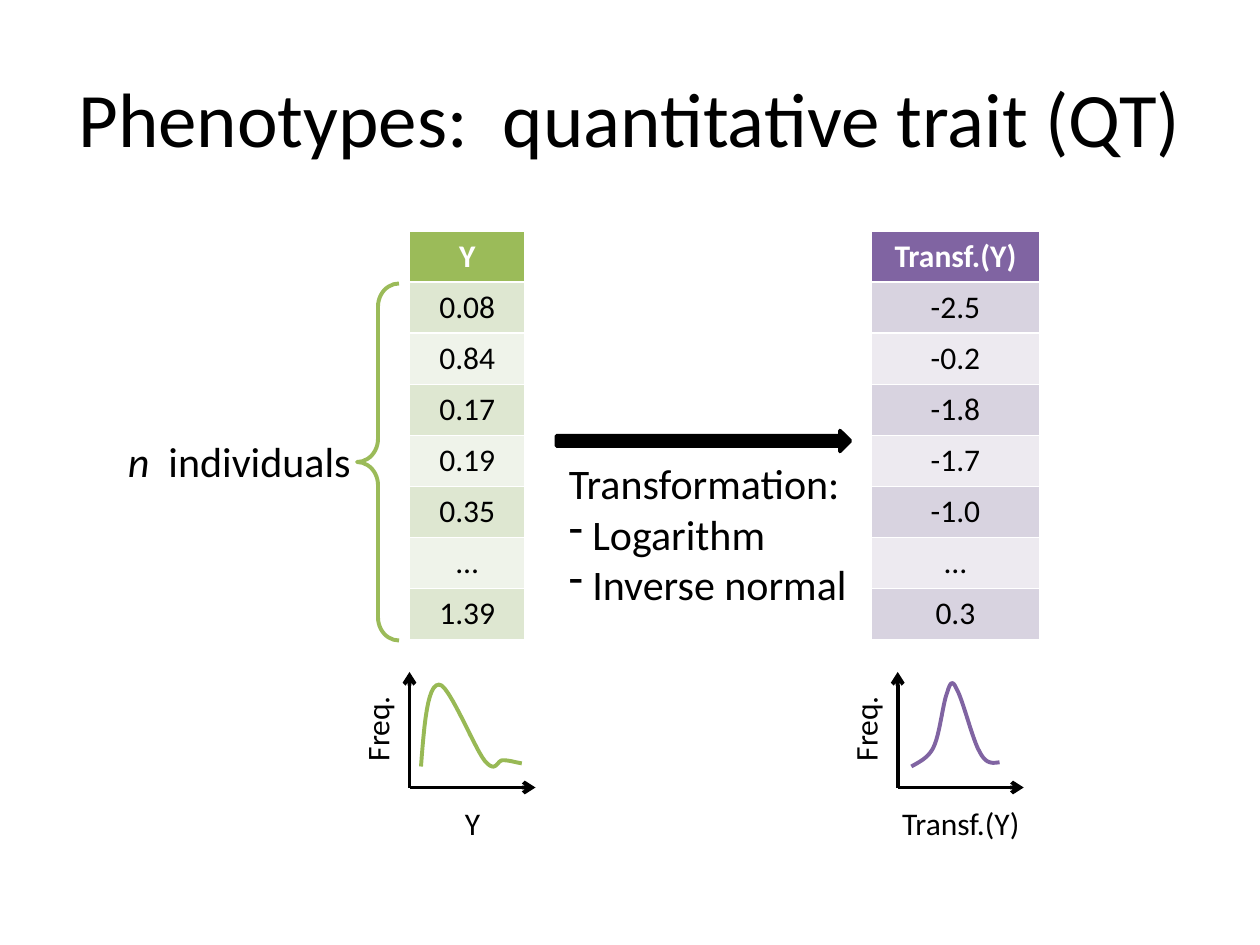
from itertools import cycle

from lxml.etree import SubElement
from pptx import Presentation
from pptx.dml.color import RGBColor
from pptx.enum.shapes import MSO_CONNECTOR, MSO_SHAPE
from pptx.enum.text import MSO_ANCHOR, MSO_AUTO_SIZE, PP_ALIGN
from pptx.oxml.ns import qn
from pptx.util import Inches, Pt

BLACK = RGBColor(0x00, 0x00, 0x00)
WHITE = RGBColor(0xFF, 0xFF, 0xFF)
GREEN = RGBColor(0x9B, 0xBB, 0x59)
GREENS = RGBColor(0xDE, 0xE7, 0xD1), RGBColor(0xEF, 0xF3, 0xEA)
LEAF = RGBColor(0x98, 0xB9, 0x55)
PURPLE = RGBColor(0x80, 0x64, 0xA2)
PURPLES = RGBColor(0xD8, 0xD3, 0xE0), RGBColor(0xED, 0xEA, 0xF0)

RAW = ["Y", "0.08", "0.84", "0.17", "0.19", "0.35", "…", "1.39"]
NEW = ["Transf.(Y)", "-2.5", "-0.2", "-1.8", "-1.7", "-1.0", "…", "0.3"]
ROW = 4.86
AXIS = 75
SKEWED = [(1.1, 2), (1.4, 5.9), (1.7, 9.8), (2.8, 9.8), (3.7, 10),
          (6.2, 3.7), (7.2, 2.5), (8.3, 1.3), (8.3, 2.6), (8.9, 2.6),
          (9.5, 2.6), (10.1, 2.4), (10.7, 2.3)]
NORMAL = [(1.3, 2), (2, 2.4), (2.9, 2.8), (3.4, 3.8), (4, 5), (4.3, 8),
          (4.7, 9), (5, 10), (5.2, 10.3), (5.6, 9.4), (6.2, 8.4),
          (7.1, 4.6), (7.8, 3.4), (8.4, 2.2), (9, 2.3), (9.7, 2.4)]


def grid(*cells):
    """Turn counts of twelfth-inch grid cells into lengths."""
    return [Inches(n / 12) for n in cells]


def style(par, size, color=BLACK, align=None, bold=False):
    """Format all runs of one paragraph."""
    par.alignment = align
    for run in par.runs:
        run.font.name = "Calibri"
        run.font.size = Pt(size)
        run.font.bold = bold
        run.font.color.rgb = color


def add_text(slide, box, text, size, align=None, wrap=False):
    """Add a text box and return it."""
    shape = slide.shapes.add_textbox(*grid(*box))
    frame = shape.text_frame
    frame.word_wrap = wrap
    frame.auto_size = MSO_AUTO_SIZE.NONE if wrap else MSO_AUTO_SIZE.SHAPE_TO_FIT_TEXT
    frame.text = text
    for par in frame.paragraphs:
        style(par, size, align=align)
    return shape


def add_column(slide, left, width, values, head, bands):
    """Add a one-column table with a header and banded rows."""
    box = grid(left, 22, width, ROW * len(values))
    table = slide.shapes.add_table(len(values), 1, *box).table
    band = cycle(bands)
    for i, value in enumerate(values):
        cell = table.cell(i, 0)
        cell.text = value
        cell.fill.solid()
        cell.fill.fore_color.rgb = next(band) if i else head
        par = cell.text_frame.paragraphs[0]
        style(par, 18, BLACK if i else WHITE, PP_ALIGN.CENTER, not i)


def add_arrow(slide, *ends):
    """Add a black axis line with an open arrowhead at its end."""
    line = slide.shapes.add_connector(MSO_CONNECTOR.STRAIGHT, *grid(*ends))
    line.line.color.rgb = BLACK
    line.line.width = Pt(2.25)
    SubElement(line.line._get_or_add_ln(), qn("a:tailEnd"), type="arrow")
    SubElement(line._element.spPr, qn("a:effectLst"))


def trace(knots, steps=12):
    """Sample points along a chain of cubic Bezier pieces."""
    points = [knots[0]]
    for i in range(0, len(knots) - 1, 3):
        for k in range(1, steps + 1):
            t = k / steps
            parts = (1 - t) ** 3, 3 * t * (1 - t) ** 2, 3 * t * t * (1 - t), t ** 3
            points.append(tuple(sum(p * knot[d] for p, knot in zip(parts, knots[i:i + 4]))
                                for d in (0, 1)))
    return points


def add_shape(slide, kind, box, line, width, fill=None):
    """Add an outlined preset shape and return it."""
    shape = slide.shapes.add_shape(kind, *grid(*box))
    paint(shape, line, width, fill)
    return shape


def paint(shape, line, width, fill=None):
    """Set the line and fill of a shape."""
    shape.shadow.inherit = False
    shape.line.color.rgb = line
    shape.line.width = Pt(width)
    if fill is None:
        shape.fill.background()
    else:
        shape.fill.solid()
        shape.fill.fore_color.rgb = fill


def add_plot(slide, left, knots, color, label, width):
    """Add a small density plot with axes and labels."""
    add_arrow(slide, left, AXIS, left, AXIS - 11)
    add_arrow(slide, left, AXIS, left + 12, AXIS)
    points = [grid(left + x, AXIS - y) for x, y in trace(knots)]
    pen = slide.shapes.build_freeform(*points[0])
    pen.add_line_segments(points[1:], close=False)
    paint(pen.convert_to_shape(), color, 2.25)
    add_text(slide, (left + 6 - width / 2, AXIS + 1, width, 4.8), label, 18, PP_ALIGN.CENTER)
    freq = add_text(slide, (left - 7.4, 67, 8.6, 4.8), "Freq.", 18, PP_ALIGN.CENTER)
    freq.rotation = 270


def add_dash(par):
    """Give a paragraph a dash bullet."""
    SubElement(par._p.get_or_add_pPr(), qn("a:buChar"), char="-")


def main():
    """Build and save the slide."""
    deck = Presentation()
    deck.slide_width, deck.slide_height = grid(120, 90)
    slide = deck.slides.add_slide(deck.slide_layouts[6])

    title = add_text(slide, (6, 3.6, 108, 15), "Phenotypes:  quantitative trait (QT)",
                     44, PP_ALIGN.CENTER, True)
    title.text_frame.vertical_anchor = MSO_ANCHOR.MIDDLE

    add_column(slide, 39, 11, RAW, GREEN, GREENS)
    add_column(slide, 83, 16, NEW, PURPLE, PURPLES)
    add_plot(slide, 39, SKEWED, LEAF, "Y", 3.8)
    add_plot(slide, 85.5, NORMAL, PURPLE, "Transf.(Y)", 13.7)

    add_shape(slide, MSO_SHAPE.RIGHT_ARROW, (53, 41, 28, 2), BLACK, 2, BLACK)
    brace = add_shape(slide, MSO_SHAPE.LEFT_BRACE, (34, 27, 4, 34), GREEN, 2.25)
    brace.adjustments[0] = 0.55

    count = add_text(slide, (11, 40.9, 23.9, 6), "n", 24)
    par = count.text_frame.paragraphs[0]
    par.add_run().text = "  individuals"
    style(par, 24)
    par.runs[0].font.italic = True

    steps = add_text(slide, (53, 43, 31, 20.6),
                     "Transformation:\n Logarithm\n Inverse normal", 24, wrap=True)
    for par in steps.text_frame.paragraphs[1:]:
        add_dash(par)

    deck.save("out.pptx")


if __name__ == "__main__":
    main()
